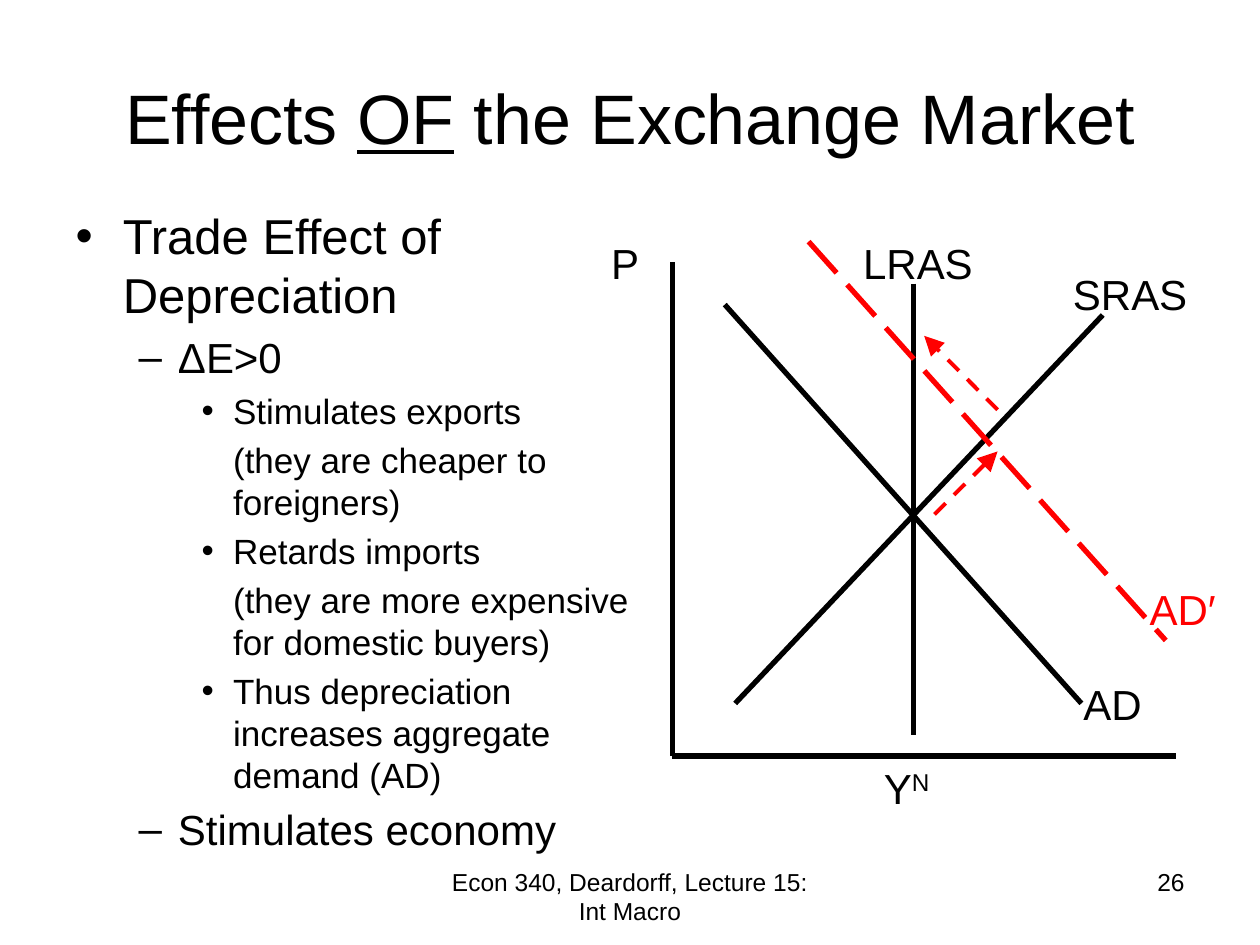
import pptx
import pptx.util
import pptx.dml.color
import pptx.enum.dml
import pptx.enum.shapes
import pptx.enum.text
import pptx.oxml.ns
from lxml import etree

Cm = pptx.util.Cm
Pt = pptx.util.Pt
Align = pptx.enum.text.PP_ALIGN
Dash = pptx.enum.dml.MSO_LINE
qn = pptx.oxml.ns.qn

COLORS = {"ink": "000000", "shift": "FF0000"}


def set_font(paragraph, size, color="ink"):
    paragraph.font.name = "Arial"
    paragraph.font.size = Pt(size)
    paragraph.font.color.rgb = pptx.dml.color.RGBColor.from_string(COLORS[color])


def add_label(text, left, top, width, height, size, align, color="ink"):
    box = page.shapes.add_textbox(Cm(left), Cm(top), Cm(width), Cm(height))
    box.text_frame.word_wrap = True
    paragraph = box.text_frame.paragraphs[0]
    paragraph.alignment = align
    paragraph.add_run().text = text
    set_font(paragraph, size, color)
    return paragraph


deck = pptx.Presentation()
deck.slide_width = Cm(25.4)
deck.slide_height = Cm(19.05)
page = deck.slides.add_slide(deck.slide_layouts[1])

title = page.shapes.title
title.left, title.top, title.width, title.height = Cm(1.27), Cm(0.76), Cm(22.86), Cm(3.18)
title.text_frame.auto_size = pptx.enum.text.MSO_AUTO_SIZE.NONE
heading = title.text_frame.paragraphs[0]
heading.alignment = Align.CENTER
for text, underlined in [("Effects ", False), ("OF", True), (" the Exchange Market", False)]:
    span = heading.add_run()
    span.text = text
    span.font.underline = underlined
set_font(heading, 40)

body = page.placeholders[1]
body.left, body.top, body.width, body.height = Cm(1.27), Cm(4.02), Cm(12.07), Cm(13.12)
body.text_frame.auto_size = pptx.enum.text.MSO_AUTO_SIZE.NONE
outline = [
    (0, True, "Trade Effect of Depreciation"),
    (1, True, "ΔE>0"),
    (2, True, "Stimulates exports"),
    (2, False, "(they are cheaper to foreigners)"),
    (2, True, "Retards imports"),
    (2, False, "(they are more expensive for domestic buyers)"),
    (2, True, "Thus depreciation increases aggregate demand (AD)"),
    (1, True, "Stimulates economy"),
]
for index, (level, bulleted, text) in enumerate(outline):
    frame = body.text_frame
    paragraph = frame.add_paragraph() if index else frame.paragraphs[0]
    paragraph.text = text
    paragraph.level = level
    set_font(paragraph, 28 - 4 * level)
    if not bulleted:
        properties = paragraph._p.get_or_add_pPr()
        properties.set("indent", "0")
        properties.insert(0, etree.Element(qn("a:buNone")))

curves = [
    (13.55, 5.29, 13.55, 15.24, "ink", 3, None, False),
    (13.55, 15.24, 23.71, 15.24, "ink", 3, None, False),
    (14.82, 14.18, 22.23, 6.35, "ink", 3, None, False),
    (18.42, 5.72, 18.42, 14.82, "ink", 3, None, False),
    (14.61, 6.14, 21.8, 14.18, "ink", 3, None, False),
    (16.3, 4.87, 23.5, 12.91, "shift", 3, Dash.LONG_DASH, False),
    (18.84, 10.37, 20.11, 9.1, "shift", 2.25, Dash.DASH, True),
    (20.11, 8.26, 18.63, 6.77, "shift", 2.25, Dash.DASH, True),
]
for x1, y1, x2, y2, color, weight, dash, arrow in curves:
    curve = page.shapes.add_connector(
        pptx.enum.shapes.MSO_CONNECTOR.STRAIGHT, Cm(x1), Cm(y1), Cm(x2), Cm(y2))
    curve.line.color.rgb = pptx.dml.color.RGBColor.from_string(COLORS[color])
    curve.line.width = Pt(weight)
    if dash:
        curve.line.dash_style = dash
    if arrow:
        etree.SubElement(curve.line._get_or_add_ln(), qn("a:tailEnd"),
                         type="triangle", w="lg", len="lg")
    etree.SubElement(curve._element.spPr, qn("a:effectLst"))

labels = [
    ("P", 12.07, 4.66, Align.LEFT, "ink"),
    ("LRAS", 17.15, 4.66, Align.LEFT, "ink"),
    ("SRAS", 21.38, 5.29, Align.LEFT, "ink"),
    ("AD", 21.59, 13.55, Align.LEFT, "ink"),
    ("AD′", 21.8, 11.64, Align.RIGHT, "shift"),
]
for text, left, top, align, color in labels:
    add_label(text, left, top, 2.96, 1.27, 24, align, color)

natural_output = add_label("Y", 17.57, 15.24, 2.96, 1.27, 24, Align.LEFT)
superscript = natural_output.add_run()
superscript.text = "N"
superscript.font._element.set("baseline", "30000")

add_label("26", 18.2, 17.35, 5.93, 1.32, 14, Align.RIGHT)
add_label("Econ 340, Deardorff, Lecture 15: Int Macro", 8.68, 17.35, 8.04, 1.32, 14, Align.CENTER)

deck.save("out.pptx")
